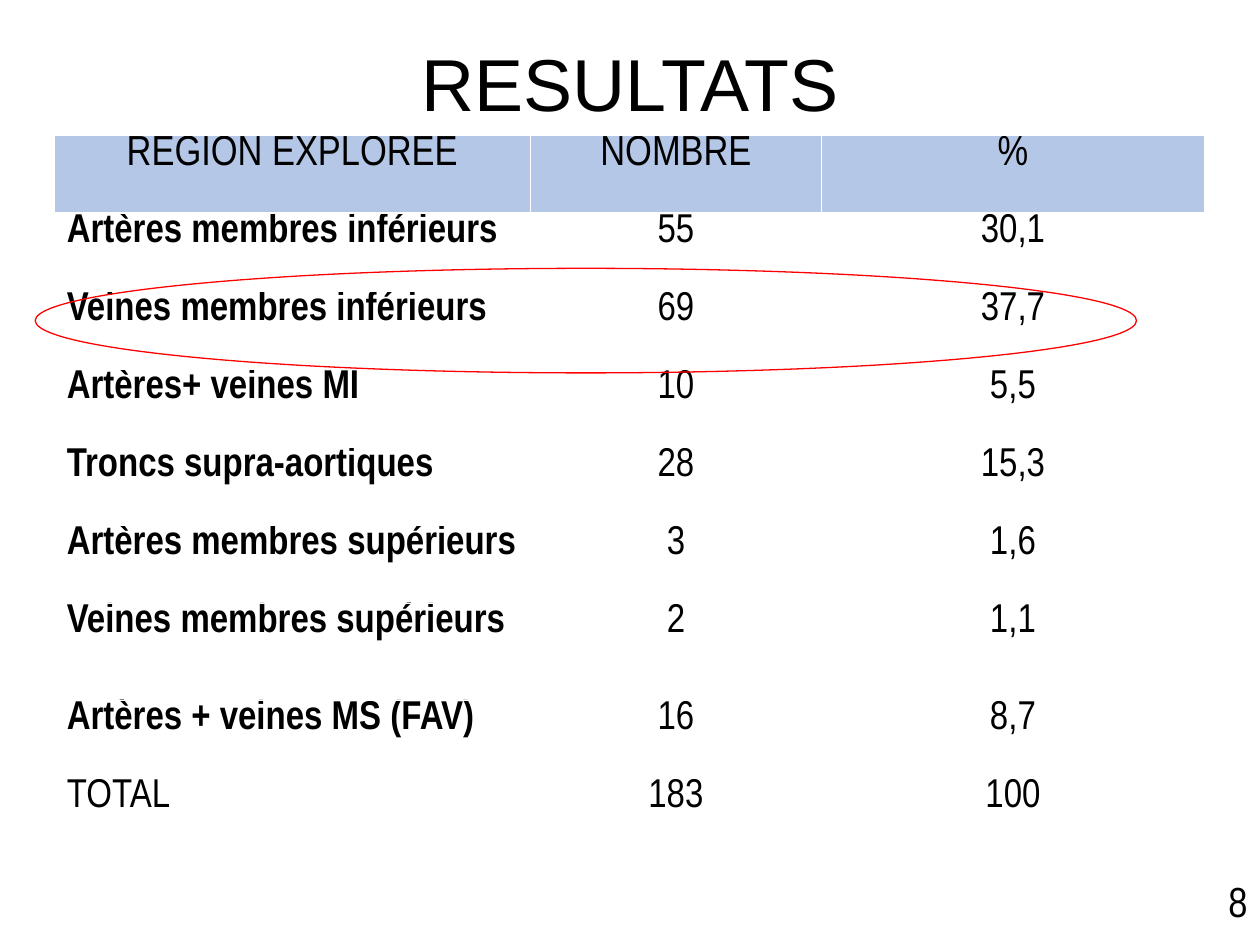
from pptx import Presentation
from pptx.dml.color import RGBColor
from pptx.enum.shapes import MSO_SHAPE
from pptx.enum.text import MSO_ANCHOR, PP_ALIGN
from pptx.util import Inches, Pt

BLACK = RGBColor(0x00, 0x00, 0x00)
RED = RGBColor(0xFF, 0x00, 0x00)
BLUE = RGBColor(0xB4, 0xC7, 0xE7)

HEADS = ("REGION EXPLOREE", "NOMBRE", "%")
ROWS = (
    ("Artères membres inférieurs", "55", "30,1"),
    ("Veines membres inférieurs", "69", "37,7"),
    ("Artères+ veines MI", "10", "5,5"),
    ("Troncs supra-aortiques", "28", "15,3"),
    ("Artères membres supérieurs", "3", "1,6"),
    ("Veines membres supérieurs", "2", "1,1"),
    ("Artères + veines MS (FAV)", "16", "8,7"),
    ("TOTAL", "183", "100"),
)
WIDTHS = (3.78, 2.31, 3.04)
ROW_H, TALL_H, TALL_ROW = 0.62, 0.77, 6


def set_text(frame, text, size, align, font="Arial Narrow", bold=False):
    frame.text = text
    para = frame.paragraphs[0]
    para.alignment = align
    style = para.runs[0].font
    style.name, style.size, style.bold = font, Pt(size), bold
    style.color.rgb = BLACK
    return para


def add_label(slide, box, text, size, align, font="Arial Narrow"):
    frame = slide.shapes.add_textbox(*map(Inches, box)).text_frame
    frame.word_wrap = True
    frame.vertical_anchor = MSO_ANCHOR.MIDDLE
    return set_text(frame, text, size, align, font)


def add_results(slide, box):
    count = len(ROWS) + 1
    table = slide.shapes.add_table(count, len(HEADS), *map(Inches, box)).table
    table.horz_banding = False
    for col, width in zip(table.columns, WIDTHS):
        col.width = Inches(width)
    for r, values in enumerate((HEADS, *ROWS)):
        head = r == 0
        table.rows[r].height = Inches(TALL_H if r == TALL_ROW else ROW_H)
        for c, value in enumerate(values):
            cell = table.cell(r, c)
            cell.margin_top = cell.margin_bottom = 0
            if head:
                cell.fill.solid()
                cell.fill.fore_color.rgb = BLUE
            else:
                cell.fill.background()
            region = c == 0 and not head
            set_text(cell.text_frame, value, 24 if head else 23,
                     PP_ALIGN.LEFT if region else PP_ALIGN.CENTER,
                     bold=region and value != "TOTAL")


def add_ring(slide, box):
    ring = slide.shapes.add_shape(MSO_SHAPE.OVAL, *map(Inches, box))
    ring.shadow.inherit = False
    ring.fill.background()
    ring.line.color.rgb = RED
    ring.line.width = Pt(0.75)


def main():
    deck = Presentation()
    deck.slide_width, deck.slide_height = Inches(10), Inches(7.5)
    slide = deck.slides.add_slide(deck.slide_layouts[6])
    add_label(slide, (7.17, 6.95, 2.83, 0.4), "8", 24, PP_ALIGN.RIGHT)
    add_results(slide, (0.43, 1.07, 9.13, 5.75))
    title = add_label(slide, (0.69, -0.03, 8.62, 1.45), "RESULTATS", 42,
                      PP_ALIGN.CENTER, "Arial")
    title.line_spacing = 0.9
    add_ring(slide, (0.28, 2.13, 8.74, 0.83))
    deck.save("out.pptx")


if __name__ == "__main__":
    main()
